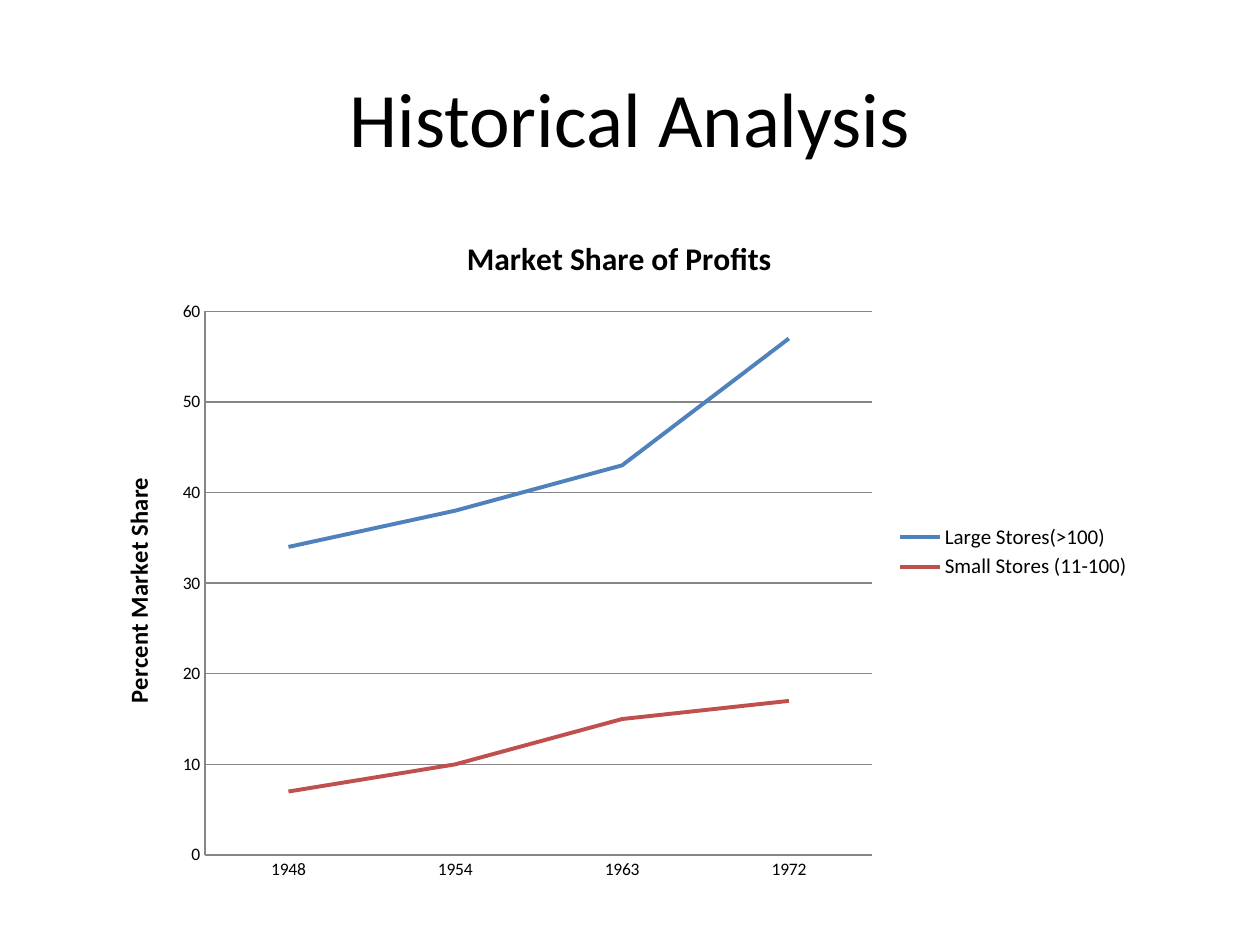
from pptx import Presentation
from pptx import util as u
from pptx.chart import data
from pptx.dml import color
from pptx.enum import chart as ch, text

HEADING = "Historical Analysis"
CHART_TITLE = "Market Share of Profits"
SHARE_LABEL = "Percent Market Share"
YEARS = ["1948", "1954", "1963", "1972"]
STORES = [
    ("Large Stores(>100)", (34, 38, 43, 57), "large"),
    ("Small Stores (11-100)", (7, 10, 15, 17), "small"),
]
COLORS = {"ink": "000000", "rule": "868686", "large": "4F81BD", "small": "C0504D"}
FONT = "Calibri"
HEADING_BOX = (0.5, 0.3, 9, 1.25)
CHART_BOX = (0.75, 1.67, 8.33, 5.42)


def rgb(key):
    return color.RGBColor.from_string(COLORS[key])


def apply(target, **values):
    for key, value in values.items():
        setattr(target, key, value)


def style_font(font, size, bold=False):
    apply(font, name=FONT, size=u.Pt(size), bold=bold)
    font.color.rgb = rgb("ink")


def style_line(line, key, width):
    line.color.rgb = rgb(key)
    line.width = u.Pt(width)


def write_title(owner, words, size):
    frame = owner.text_frame
    frame.text = words
    style_font(frame.paragraphs[0].runs[0].font, size, True)


def add_heading(slide):
    frame = slide.shapes.add_textbox(*map(u.Inches, HEADING_BOX)).text_frame
    apply(frame, word_wrap=True, vertical_anchor=text.MSO_ANCHOR.MIDDLE, text=HEADING)
    heading = frame.paragraphs[0]
    heading.alignment = text.PP_ALIGN.CENTER
    style_font(heading.runs[0].font, 44)


def add_share_chart(slide):
    shares = data.CategoryChartData()
    shares.categories = YEARS
    for name, values, _ in STORES:
        shares.add_series(name, values)
    chart = slide.shapes.add_chart(
        ch.XL_CHART_TYPE.LINE, *map(u.Inches, CHART_BOX), shares
    ).chart

    style_font(chart.font, 10)
    apply(chart, has_title=True, has_legend=True)
    write_title(chart.chart_title, CHART_TITLE, 18)
    apply(chart.legend, position=ch.XL_LEGEND_POSITION.RIGHT, include_in_layout=False)
    style_font(chart.legend.font, 12)

    for axis in (chart.category_axis, chart.value_axis):
        apply(axis, major_tick_mark=ch.XL_TICK_MARK.NONE,
              minor_tick_mark=ch.XL_TICK_MARK.NONE)
        style_line(axis.format.line, "rule", 0.75)
    share_axis = chart.value_axis
    apply(share_axis, minimum_scale=0, maximum_scale=60, major_unit=10,
          has_major_gridlines=True)
    style_line(share_axis.major_gridlines.format.line, "rule", 0.75)
    write_title(share_axis.axis_title, SHARE_LABEL, 14)

    chart.plots[0].vary_by_categories = False
    for series, (_, _, key) in zip(chart.plots[0].series, STORES):
        series.smooth = False
        series.marker.style = ch.XL_MARKER_STYLE.NONE
        style_line(series.format.line, key, 2.25)


def main():
    deck = Presentation()
    apply(deck, slide_width=u.Inches(10), slide_height=u.Inches(7.5))
    slide = deck.slides.add_slide(deck.slide_layouts[6])
    add_heading(slide)
    add_share_chart(slide)
    deck.save("out.pptx")


if __name__ == "__main__":
    main()
